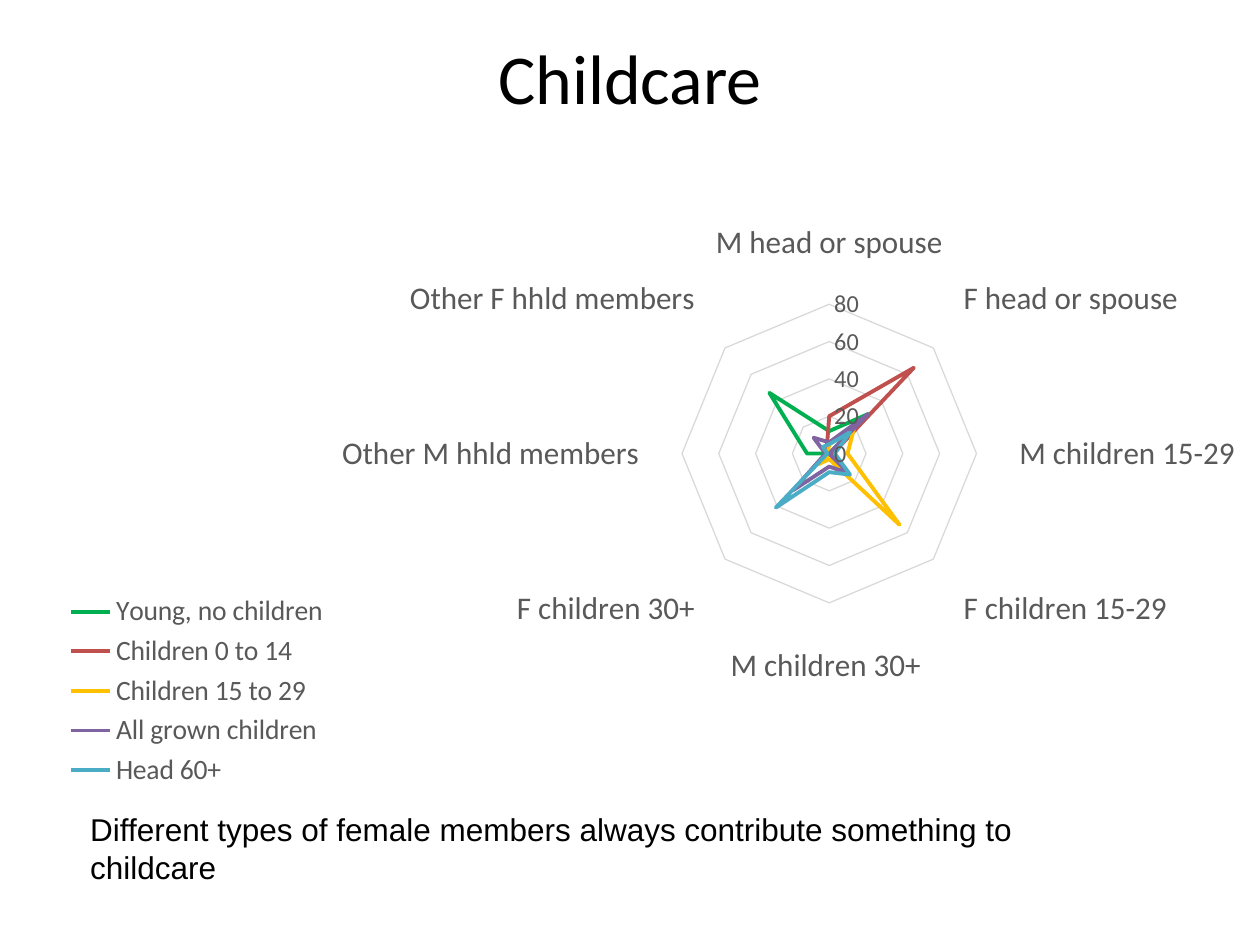
import pptx
import pptx.chart.data
import pptx.dml.color
import pptx.enum.chart
import pptx.enum.text
import pptx.oxml
import pptx.oxml.ns
import pptx.util
from pptx.util import Cm

# Content
TITLE = "Childcare"
NOTE = "Different types of female members always contribute something to childcare"
ROLES = ["M head or spouse", "F head or spouse ", "M children 15-29 ",
         "F children 15-29", "M children 30+ ", "F children 30+",
         "Other M hhld members", "Other F hhld members"]
STAGES = [
    ("Young, no children", "00B050", (12, 30, 0, 0, 0, 0, 12, 46)),
    ("Children 0 to 14", "C0504D", (20, 65, 2, 8, 0, 1, 0, 2)),
    ("Children 15 to 29", "FFC000", (5, 19, 10, 54, 3, 8, 0, 1)),
    ("All grown children", "8064A2", (6, 30, 0, 15, 7, 28, 2, 12)),
    ("Head 60+", "4BACC6", (5, 16, 3, 16, 10, 41, 1, 5)),
]

# Colours and type
THEME = {
    "face": "Calibri", "note_face": "Arial",
    "ink": "000000", "label": "595959", "grid": "D9D9D9",
    "title": 40, "note": 18, "role": 18, "key": 16, "scale": 14, "chart": 10,
    "line": 2.25, "thin": 0.75,
}

# Places: left, top, width, height in cm; chart parts as shares of the chart
TITLE_BOX = (1.27, -0.05, 22.86, 3.18)
NOTE_BOX = (1.57, 16.21, 20.65, 1.8)
CHART_BOX = (1.27, 2.31, 23.77, 13.67)
PLOT = (0.26, 0.02, 0.76, 0.96)
KEY = (0, 0.7, 0.23, 0.3)


def color(name):
    return pptx.dml.color.RGBColor.from_string(THEME.get(name, name))


def style(font, size, ink, face="face"):
    font.size = pptx.util.Pt(THEME[size])
    font.name = THEME[face]
    font.color.rgb = color(ink)


def stroke(line, ink, width):
    line.color.rgb = color(ink)
    line.width = pptx.util.Pt(THEME[width])


def arrange(part, index, box):
    """Give the plot area (labels included) or legend a fixed place."""
    for old in part.findall(pptx.oxml.ns.qn("c:layout")):
        part.remove(old)
    modes = "".join(f'<c:{k}Mode val="edge"/>' for k in "xy")
    sizes = "".join(f'<c:{k} val="{v}"/>' for k, v in zip("xywh", box))
    part.insert(index, pptx.oxml.parse_xml(
        f'<c:layout {pptx.oxml.ns.nsdecls("c")}><c:manualLayout>'
        f"{modes}{sizes}</c:manualLayout></c:layout>"))


def add_radar(slide):
    data = pptx.chart.data.CategoryChartData()
    data.categories = ROLES
    for name, _, vals in STAGES:
        data.add_series(name, vals)
    chart = slide.shapes.add_chart(
        pptx.enum.chart.XL_CHART_TYPE.RADAR, *map(Cm, CHART_BOX), data).chart
    chart.has_title = False
    style(chart.font, "chart", "ink")

    # Series
    for series, (_, ink, _) in zip(chart.plots[0].series, STAGES):
        stroke(series.format.line, ink, "line")
        series.marker.style = pptx.enum.chart.XL_MARKER_STYLE.NONE

    # Axes
    for axis, size in ((chart.category_axis, "role"), (chart.value_axis, "scale")):
        axis.major_tick_mark = axis.minor_tick_mark = pptx.enum.chart.XL_TICK_MARK.NONE
        axis.has_major_gridlines = True
        stroke(axis.major_gridlines.format.line, "grid", "thin")
        style(axis.tick_labels.font, size, "label")
    stroke(chart.category_axis.format.line, "grid", "thin")
    scale = chart.value_axis
    scale.format.line.fill.background()
    scale.minimum_scale, scale.maximum_scale, scale.major_unit = 0, 80, 20

    # Legend
    chart.has_legend = True
    key = chart.legend
    key.position = pptx.enum.chart.XL_LEGEND_POSITION.LEFT
    key.include_in_layout = False
    style(key.font, "key", "label")

    space = chart.element.find(pptx.oxml.ns.qn("c:chart"))
    arrange(space.find(pptx.oxml.ns.qn("c:plotArea")), 0, PLOT)
    arrange(space.find(pptx.oxml.ns.qn("c:legend")), 1, KEY)


def main():
    deck = pptx.Presentation()
    deck.slide_width, deck.slide_height = Cm(25.4), Cm(19.05)
    slide = deck.slides.add_slide(deck.slide_layouts[5])

    # Title
    title = slide.shapes.title
    title.left, title.top, title.width, title.height = map(Cm, TITLE_BOX)
    title.text_frame.text = TITLE
    title.text_frame.vertical_anchor = pptx.enum.text.MSO_ANCHOR.MIDDLE
    head = title.text_frame.paragraphs[0]
    head.alignment = pptx.enum.text.PP_ALIGN.CENTER
    style(head.font, "title", "ink")

    # Note below the chart
    frame = slide.shapes.add_textbox(*map(Cm, NOTE_BOX)).text_frame
    frame.word_wrap = True
    frame.auto_size = pptx.enum.text.MSO_AUTO_SIZE.SHAPE_TO_FIT_TEXT
    frame.text = NOTE
    style(frame.paragraphs[0].font, "note", "ink", "note_face")

    add_radar(slide)
    deck.save("out.pptx")


if __name__ == "__main__":
    main()
